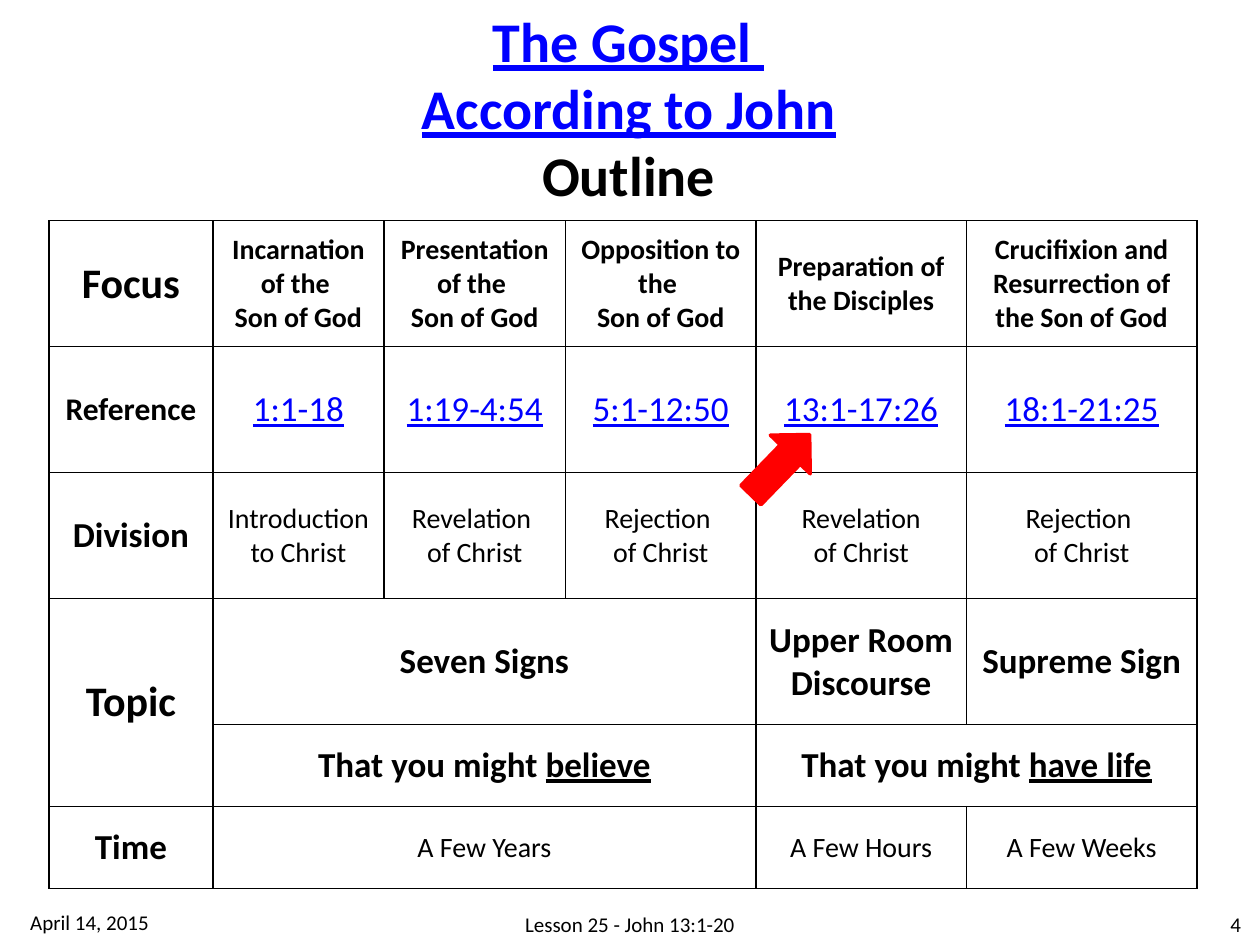
from lxml.etree import SubElement as Sub
from pptx import Presentation
from pptx.dml.color import RGBColor as RGB
from pptx.enum.shapes import MSO_SHAPE as Shape
from pptx.enum.text import MSO_ANCHOR as Anchor, MSO_AUTO_SIZE as Fit, PP_ALIGN as Align
from pptx.oxml.ns import qn
from pptx.util import Cm, Pt

BLACK, BLUE, RED = "000000", "0000FF", "FF0000"
WIDTHS = [3.3, 3.45, 3.66, 3.84, 4.24, 4.65]
HEIGHTS = [2.54] * 4 + [1.65] * 2
HEADS = [("Focus", 24), ("Reference", 18), ("Division", 20), ("Topic", 24), None, ("Time", 20)]
FOCUS = ["Incarnation of the \nSon of God", "Presentation of the \nSon of God",
         "Opposition to the \nSon of God", "Preparation of the Disciples",
         "Crucifixion and Resurrection of the Son of God"]
VERSES = ["1:1-18", "1:19-4:54", "5:1-12:50", "13:1-17:26", "18:1-21:25"]
PARTS = ["Introduction to Christ", "Revelation \nof Christ", "Rejection \nof Christ",
         "Revelation\nof Christ", "Rejection \nof Christ"]
TOPICS = ["Seven Signs", None, None, "Upper Room Discourse", "Supreme Sign"]
AIMS = ["That you might |believe", None, None, "That you might |have life", None]
TIMES = ["A Few Years", None, None, "A Few Hours", "A Few Weeks"]
BODY = [(FOCUS, 16, True, BLACK), (VERSES, 20, False, BLUE), (PARTS, 16, False, BLACK),
        (TOPICS, 20, True, BLACK), (AIMS, 20, True, BLACK), (TIMES, 16, False, BLACK)]
SPANS = [(3, 0, 4, 0), (3, 1, 3, 3), (4, 1, 4, 3), (4, 4, 4, 5), (5, 1, 5, 3)]


def tint(code):
    return RGB.from_string(code)


def style(par, size, bold=False, color=BLACK, align=Align.CENTER):
    par.alignment = align
    font = par.font
    font.name, font.size, font.bold = "Calibri", Pt(size), bold
    font.color.rgb = tint(color)
    font.underline = color == BLUE


def write(frame, text, size, bold=False, color=BLACK, align=Align.CENTER):
    for i, line in enumerate(text.split("\n")):
        par = frame.paragraphs[0] if i == 0 else frame.add_paragraph()
        style(par, size, bold, color, align)
        for n, part in enumerate(line.split("|")):
            run = par.add_run()
            run.text = part
            if n:
                run.font.underline = True


def add_title(slide):
    box = slide.shapes.title
    box.left, box.top, box.width, box.height = Cm(8.08), Cm(0), Cm(9.19), Cm(4.37)
    frame = box.text_frame
    frame.word_wrap, frame.auto_size = False, Fit.SHAPE_TO_FIT_TEXT
    frame.vertical_anchor = Anchor.TOP
    write(frame, "The Gospel \nAccording to John\nOutline", 32, True, BLUE)
    style(frame.paragraphs[-1], 32, True)


def frame_cell(cell):
    props = cell._tc.get_or_add_tcPr()
    for side in ("lnL", "lnR", "lnT", "lnB"):
        line = Sub(props, qn(f"a:{side}"), w=str(Pt(1)))
        fill = Sub(line, qn("a:solidFill"))
        Sub(fill, qn("a:srgbClr"), val=BLACK)
    cell.fill.background()
    cell.vertical_anchor = Anchor.MIDDLE


def add_grid(slide):
    table = slide.shapes.add_table(len(HEIGHTS), len(WIDTHS), Cm(0.99), Cm(4.45),
                                   Cm(sum(WIDTHS)), Cm(sum(HEIGHTS))).table
    table.first_row = table.horz_banding = False
    for col, width in zip(table.columns, WIDTHS):
        col.width = Cm(width)
    for row, height in zip(table.rows, HEIGHTS):
        row.height = Cm(height)
    for cell in table.iter_cells():
        frame_cell(cell)
    for top, left, low, right in SPANS:
        table.cell(top, left).merge(table.cell(low, right))
    for r, (head, (texts, size, bold, color)) in enumerate(zip(HEADS, BODY)):
        if head:
            write(table.cell(r, 0).text_frame, *head, True)
        for c, text in enumerate(texts, 1):
            if text:
                write(table.cell(r, c).text_frame, text, size, bold, color)


def add_arrow(slide):
    arrow = slide.shapes.add_shape(Shape.RIGHT_ARROW, Cm(14.88), Cm(8.81), Cm(1.7), Cm(1.12))
    arrow.rotation = 314.1
    arrow.shadow.inherit = False
    arrow.fill.solid()
    arrow.fill.fore_color.rgb = arrow.line.color.rgb = tint(RED)
    arrow.line.width = Pt(2)


def add_note(slide, text, left, top, width, align):
    frame = slide.shapes.add_textbox(Cm(left), Cm(top), Cm(width), Cm(1.02)).text_frame
    frame.word_wrap, frame.vertical_anchor = True, Anchor.MIDDLE
    write(frame, text, 12, align=align)


def main():
    deck = Presentation()
    deck.slide_width, deck.slide_height = Cm(25.4), Cm(19.05)
    slide = deck.slides.add_slide(deck.slide_layouts[5])
    add_title(slide)
    add_grid(slide)
    add_arrow(slide)
    add_note(slide, "4", 23.37, 18.11, 1.9, Align.RIGHT)
    add_note(slide, "April 14, 2015", 0.36, 18.08, 4.34, Align.LEFT)
    add_note(slide, "Lesson 25 - John 13:1-20", 3.91, 18.11, 17.58, Align.CENTER)
    deck.save("out.pptx")


if __name__ == "__main__":
    main()
